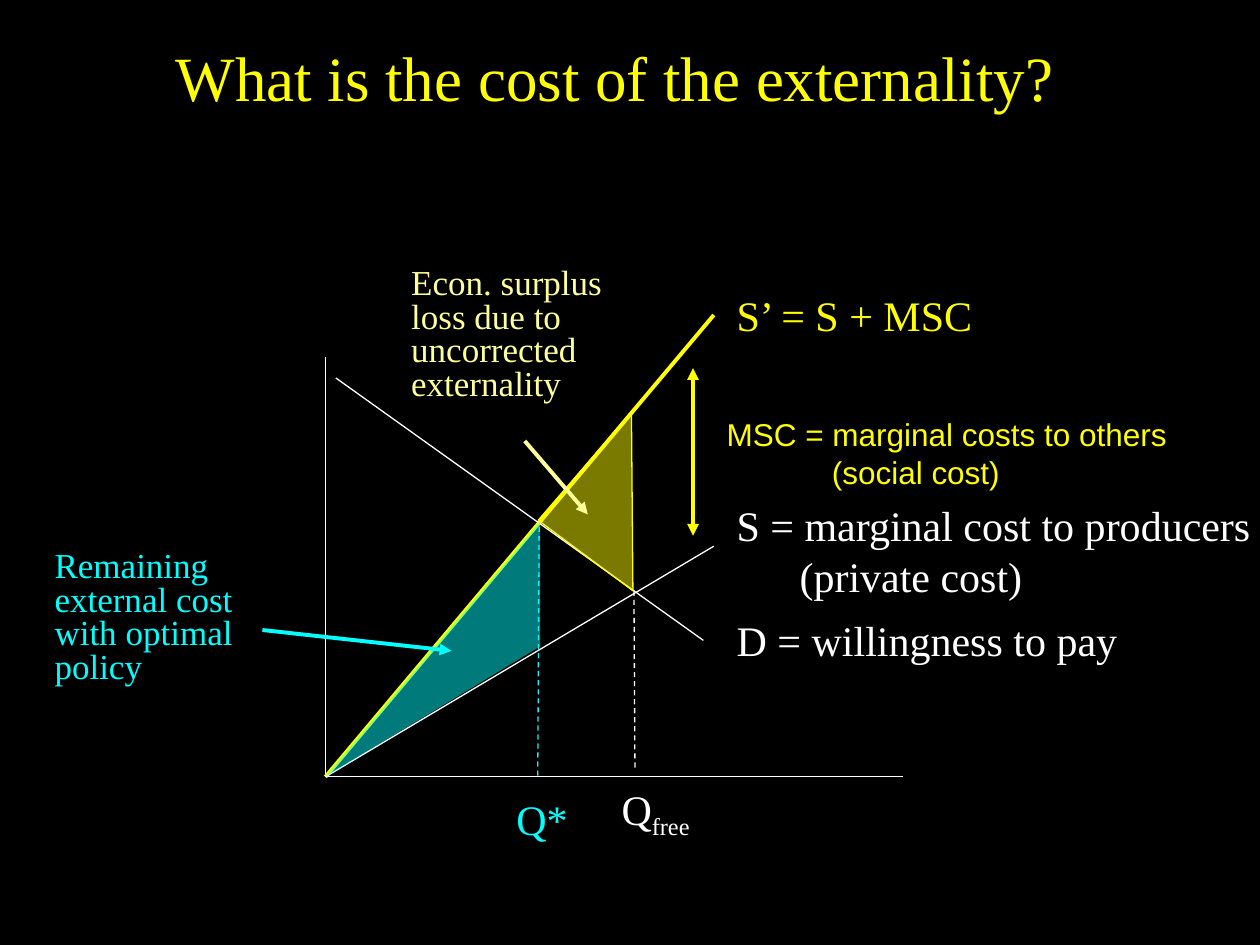
from dataclasses import dataclass

from lxml.etree import SubElement
from pptx import Presentation
from pptx.dml.color import RGBColor
from pptx.enum.dml import MSO_LINE
from pptx.enum.shapes import MSO_CONNECTOR
from pptx.enum.text import MSO_ANCHOR, MSO_AUTO_SIZE, PP_ALIGN
from pptx.oxml.ns import qn
from pptx.util import Cm, Pt


@dataclass(frozen=True)
class Theme:
    background: RGBColor = RGBColor(0, 0, 0)
    plain: RGBColor = RGBColor(255, 255, 255)
    social: RGBColor = RGBColor(255, 255, 0)
    optimal: RGBColor = RGBColor(0, 255, 255)
    loss: RGBColor = RGBColor(255, 255, 153)
    serif: str = "Times New Roman"
    sans: str = "Arial"
    title: int = 36
    label: int = 24
    callout: int = 20
    note: int = 18
    thin: float = 0.75
    thick: float = 2.25
    opacity: int = 48


@dataclass(frozen=True)
class Box:
    left: float
    top: float
    width: float
    height: float

    def point(self, x, y):
        return Cm(self.left + x), Cm(self.top + y)


THEME = Theme()


def format_font(font, size, color, face=THEME.serif):
    font.size, font.name = Pt(size), face
    font.color.rgb = color


def add_line(slide, box, start, end, color, width=THEME.thin, dashed=False, arrows=()):
    line = slide.shapes.add_connector(
        MSO_CONNECTOR.STRAIGHT, *box.point(*start), *box.point(*end))
    line.line.color.rgb = color
    line.line.width = Pt(width)
    if dashed:
        line.line.dash_style = MSO_LINE.DASH
    for arrow in arrows:
        SubElement(line.line._get_or_add_ln(), qn(f"a:{arrow}")).set("type", "triangle")
    SubElement(line._element.spPr, qn("a:effectLst"))


def add_label(slide, box, corner, size, lines, color, points=THEME.label,
              face=THEME.serif, wrap=False, indent=0, spacing=None):
    label = slide.shapes.add_textbox(*box.point(*corner), *map(Cm, size))
    frame = label.text_frame
    frame.word_wrap = wrap
    frame.text = "\n".join(lines)
    for paragraph in frame.paragraphs:
        paragraph.line_spacing = spacing
        for run in paragraph.runs:
            format_font(run.font, points, color, face)
    for paragraph in frame.paragraphs[1:]:
        paragraph._p.get_or_add_pPr().set("marL", str(Cm(indent)))
    return frame


def add_area(slide, box, corners, color, outlined=False):
    first, *rest = [box.point(*corner) for corner in corners]
    builder = slide.shapes.build_freeform(*first)
    builder.add_line_segments(rest, close=True)
    area = builder.convert_to_shape()
    area.shadow.inherit = False
    area.fill.solid()
    area.fill.fore_color.rgb = color
    shade = area._element.spPr.find(qn("a:solidFill"))[0]
    SubElement(shade, qn("a:alpha")).set("val", str(THEME.opacity * 1000))
    if outlined:
        area.line.color.rgb = color
        area.line.width = Pt(THEME.thin)
    else:
        area.line.fill.background()


def place_title(slide, box):
    title = slide.shapes.title
    title.left, title.top = box.point(0, 0)
    title.width, title.height = Cm(box.width), Cm(box.height)
    frame = title.text_frame
    frame.text = "What is the cost of the externality?"
    frame.vertical_anchor = MSO_ANCHOR.TOP
    frame.auto_size = MSO_AUTO_SIZE.NONE
    heading = frame.paragraphs[0]
    heading.alignment = PP_ALIGN.CENTER
    heading.line_spacing = 0.7
    format_font(heading.runs[0].font, THEME.title, THEME.social)


def draw_market(slide, box):
    origin = (0, box.height)
    supply_end = 7.83
    add_line(slide, box, (0, 0.85), origin, THEME.plain)
    add_line(slide, box, origin, (box.width, box.height), THEME.plain)
    add_line(slide, box, origin, (supply_end, 0), THEME.social, THEME.thick)
    add_line(slide, box, (4.31, 4.27), (4.28, box.height), THEME.optimal, dashed=True)
    add_line(slide, box, (0.21, 1.27), (7.62, 6.56), THEME.plain)
    add_line(slide, box, origin, (supply_end, 4.66), THEME.plain)
    add_line(slide, box, (6.22, 5.56), (6.24, 9.19), THEME.plain, dashed=True)
    add_line(slide, box, (7.41, 4.45), (7.41, 1.07), THEME.social, THEME.thick,
             arrows=("headEnd", "tailEnd"))
    add_area(slide, box, [(4.29, 4.14), (6.17, 1.96), (6.2, 5.56)], THEME.social, True)
    add_area(slide, box, [origin, (4.33, 4.17), (4.33, 6.68)], THEME.optimal)
    add_label(slide, box, (3.6, 9.53), (1.55, 1.27), ["Q*"], THEME.optimal)
    free_quantity = add_label(slide, box, (5.72, 9.31), (2, 1.27), ["Q"], THEME.plain)
    subscript = free_quantity.paragraphs[0].add_run()
    subscript.text = "free"
    format_font(subscript.font, THEME.label, THEME.plain)
    subscript.font._element.set("baseline", "-25000")


def place_curve_labels(slide, box):
    inset = 0.2
    add_label(slide, box, (inset, 0), (5.31, 1.27), ["S’ = S + MSC"], THEME.social)
    add_label(slide, box, (inset, 4.24), (10.97, 2.31),
              ["S = marginal cost to producers", "(private cost)"], THEME.plain, indent=1.27)
    add_label(slide, box, (0, 2.54), (box.width, 1.8),
              ["MSC = marginal costs to others", "(social cost)"], THEME.social,
              THEME.note, THEME.sans, wrap=True, indent=2.12)
    add_label(slide, box, (inset, 6.55), (8.18, 1.27), ["D = willingness to pay"], THEME.plain)


def place_callout(slide, box, text, color, start, end):
    add_line(slide, box, start, end, color, THEME.thick, arrows=("tailEnd",))
    add_label(slide, box, (0, 0), (box.width, box.height), [text], color,
              THEME.callout, wrap=True, spacing=0.8)


def main():
    deck = Presentation()
    deck.slide_width, deck.slide_height = Cm(25.4), Cm(19.05)
    slide = deck.slides.add_slide(deck.slide_layouts[5])
    slide.background.fill.solid()
    slide.background.fill.fore_color.rgb = THEME.background
    place_title(slide, Box(0.43, 1.07, 23.93, 3.18))
    draw_market(slide, Box(6.56, 6.35, 11.64, 9.31))
    place_curve_labels(slide, Box(14.4, 5.71, 10.36, 7.82))
    place_callout(slide, Box(8.04, 5.29, 5.29, 2.97),
                  "Econ. surplus loss due to uncorrected externality",
                  THEME.loss, (2.54, 3.6), (3.81, 5.08))
    place_callout(slide, Box(0.85, 11, 5.29, 2.97),
                  "Remaining external cost with optimal policy",
                  THEME.optimal, (4.44, 1.7), (8.25, 2.12))
    deck.save("out.pptx")


if __name__ == "__main__":
    main()
